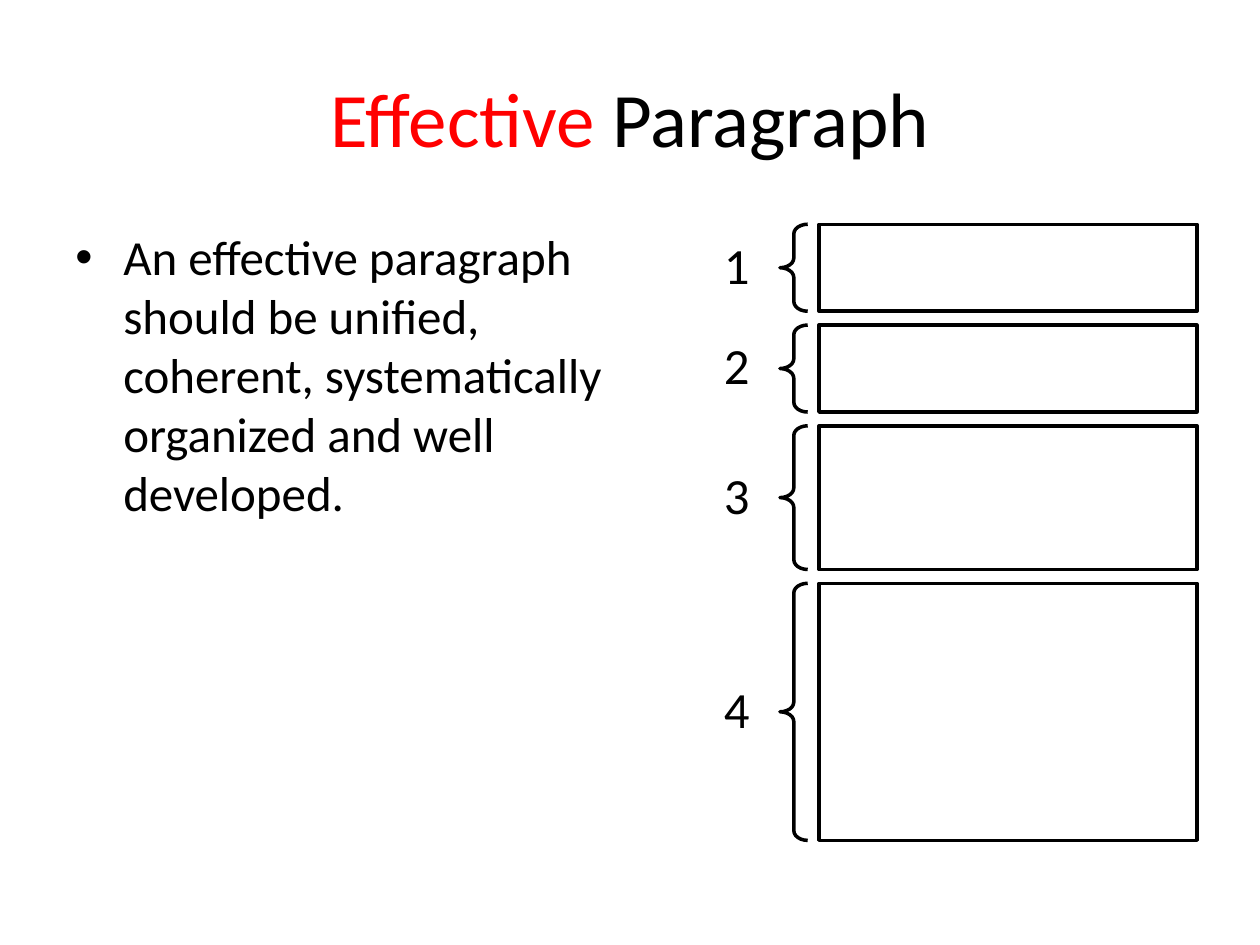
"""Build the Effective Paragraph slide with four numbered, braced blocks."""
from lxml.etree import SubElement
from pptx import Presentation
from pptx.dml.color import RGBColor
from pptx.enum.shapes import MSO_SHAPE as Shape
from pptx.enum.text import MSO_ANCHOR as Anchor, PP_ALIGN as Align
from pptx.oxml.ns import qn
from pptx.util import Inches, Pt

BLACK, WHITE, RED = "000000", "FFFFFF", "FF0000"
TITLE = [("Effective", RED), (" Paragraph", BLACK)]
BODY = [("An effective paragraph should be unified, coherent, "
         "systematically organized and well developed.", BLACK)]
BLOCKS = [("1", 0.69), ("2", 0.69), ("3", 1.14), ("4", 2.04)]
BLOCK_TOP, BLOCK_GAP, LABEL_HEIGHT = 1.78, 0.11, 0.63
LABEL_FRAME = {"margin_left": Inches(0.23), "margin_right": Inches(0.23),
               "margin_top": Inches(0.08), "margin_bottom": Inches(0.08),
               "vertical_anchor": Anchor.MIDDLE}


def color(value):
    return RGBColor.from_string(value)


def set_values(target, values):
    for name, value in values.items():
        setattr(target, name, value)


def add_text(page, area, spans, size, frame_format, para_format):
    frame = page.shapes.add_textbox(*map(Inches, area)).text_frame
    set_values(frame, {"word_wrap": True, **frame_format})
    para = frame.paragraphs[0]
    set_values(para, para_format)
    for text, ink in spans:
        span = para.add_run()
        span.text = text
        set_values(span.font, {"name": "Calibri", "size": Pt(size)})
        span.font.color.rgb = color(ink)
    return para


def add_bullet(para, indent):
    props = para._p.get_or_add_pPr()
    props.set("marL", str(Inches(indent)))
    props.set("indent", str(-Inches(indent)))
    SubElement(props, qn("a:buFont"), typeface="Arial")
    SubElement(props, qn("a:buChar"), char="•")


def add_outline(page, kind, area):
    shape = page.shapes.add_shape(kind, *map(Inches, area))
    shape.shadow.inherit = False
    shape.line.color.rgb = color(BLACK)
    shape.line.width = Pt(2)
    return shape


def add_block(page, label, top, height):
    label_top = top + (height - LABEL_HEIGHT) / 2
    add_text(page, (5.08, label_top, 1.1, LABEL_HEIGHT), [(label, BLACK)], 29,
             LABEL_FRAME, {"alignment": Align.RIGHT, "line_spacing": 0.9})
    brace = add_outline(page, Shape.LEFT_BRACE, (6.19, top, 0.22, height))
    brace.adjustments[0] = 0.35
    brace.fill.background()
    panel = add_outline(page, Shape.RECTANGLE, (6.5, top, 3, height))
    panel.fill.solid()
    panel.fill.fore_color.rgb = color(WHITE)


def main():
    deck = Presentation()
    set_values(deck, {"slide_width": Inches(10), "slide_height": Inches(7.5)})
    page = deck.slides.add_slide(deck.slide_layouts[6])
    add_text(page, (0.5, 0.3, 9, 1.25), TITLE, 44,
             {"vertical_anchor": Anchor.MIDDLE}, {"alignment": Align.CENTER})
    add_bullet(add_text(page, (0.5, 1.75, 4.42, 4.95), BODY, 28, {}, {}), 0.38)
    top = BLOCK_TOP
    for label, height in BLOCKS:
        add_block(page, label, top, height)
        top += height + BLOCK_GAP
    deck.save("out.pptx")


if __name__ == "__main__":
    main()
